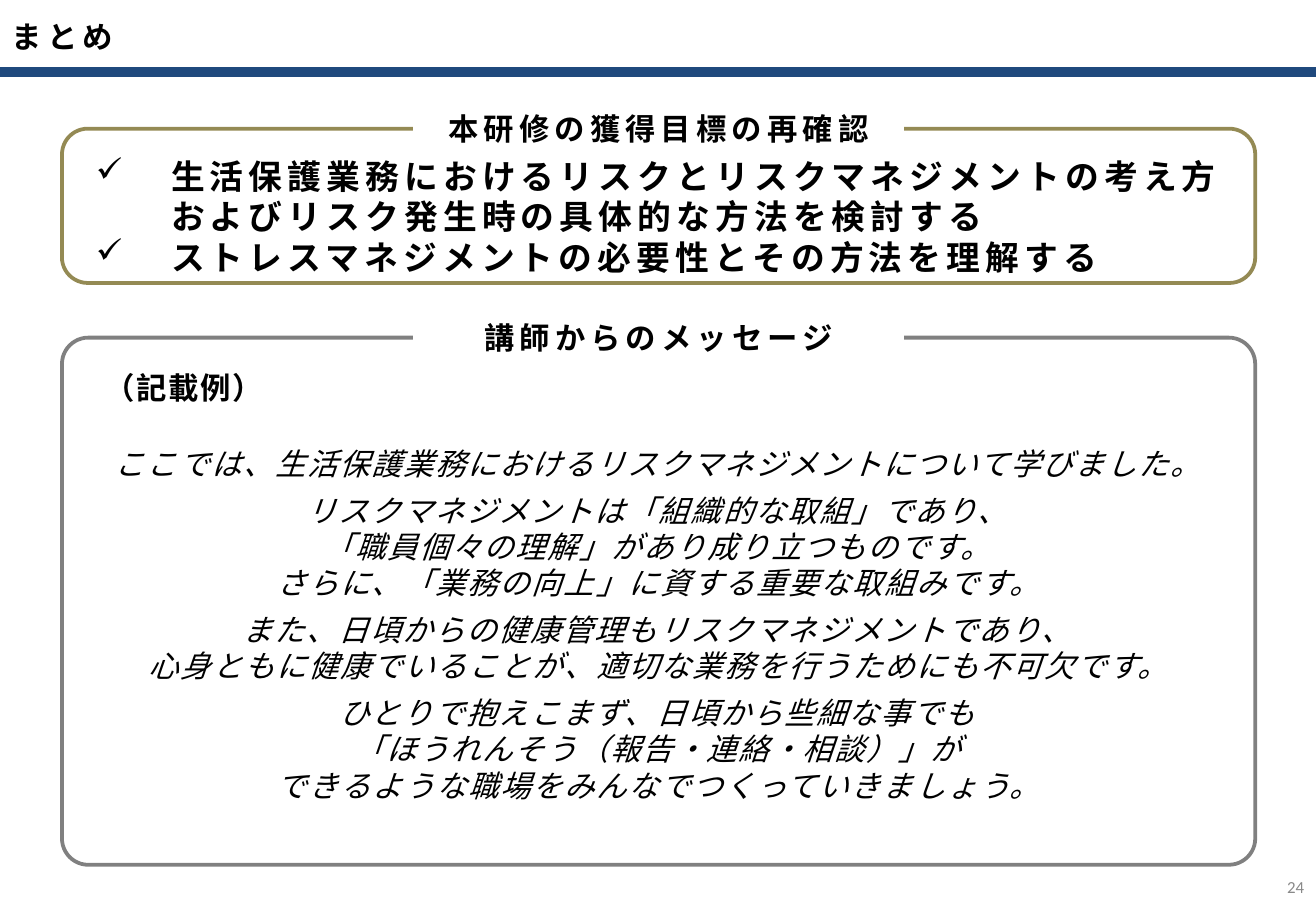
from dataclasses import dataclass

from lxml.etree import SubElement
from pptx import Presentation
from pptx.dml.color import RGBColor
from pptx.enum.shapes import MSO_CONNECTOR, MSO_SHAPE
from pptx.enum.text import MSO_ANCHOR, PP_ALIGN
from pptx.oxml.ns import qn
from pptx.slide import Slide
from pptx.util import Inches, Pt

COLORS = {
    "navy": "1F497D",
    "olive": "948A54",
    "gray": "808080",
    "number": "898989",
    "black": "000000",
    "white": "FFFFFF",
}
JAPANESE = "Noto Sans CJK JP"
LINE_HEIGHT = 1.2
WIDTH, HEIGHT = 10.83, 7.5
HEADER_HEIGHT = 0.59

Box = tuple[float, float, float, float]


@dataclass
class Panel:
    heading: str
    top: float
    height: float
    color: str
    corner: float


PANELS = [
    Panel("本研修の獲得目標の再確認", 1.06, 1.27, "olive", 0.167),
    Panel("講師からのメッセージ", 2.78, 4.34, "gray", 0.05),
]

GOALS = [
    "生活保護業務におけるリスクとリスクマネジメントの考え方およびリスク発生時の具体的な方法を検討する",
    "ストレスマネジメントの必要性とその方法を理解する",
]

MESSAGE = [
    "ここでは、生活保護業務におけるリスクマネジメントについて学びました。",
    "リスクマネジメントは「組織的な取組」であり、\n"
    "「職員個々の理解」があり成り立つものです。\n"
    "さらに、「業務の向上」に資する重要な取組みです。",
    "また、日頃からの健康管理もリスクマネジメントであり、\n"
    "心身ともに健康でいることが、適切な業務を行うためにも不可欠です。",
    "ひとりで抱えこまず、日頃から些細な事でも\n"
    "「ほうれんそう（報告・連絡・相談）」が\n"
    "できるような職場をみんなでつくっていきましょう。",
]


def color(name: str) -> RGBColor:
    return RGBColor.from_string(COLORS[name])


def add_text(
    slide: Slide,
    box: Box,
    texts: list[str],
    *,
    size: float = 18,
    font: str = JAPANESE,
    ink: str = "black",
    fill: str | None = None,
    bold: bool = False,
    italic: bool = False,
    tracking: float = 0,
    align: PP_ALIGN = PP_ALIGN.LEFT,
    space_before: float = 0,
    bullet: str | None = None,
    hanging: float = 0,
) -> None:
    shape = slide.shapes.add_textbox(*map(Inches, box))
    if fill:
        shape.fill.solid()
        shape.fill.fore_color.rgb = color(fill)
    frame = shape.text_frame
    frame.word_wrap = True
    frame.vertical_anchor = MSO_ANCHOR.MIDDLE
    for index, text in enumerate(texts):
        paragraph = frame.add_paragraph() if index else frame.paragraphs[0]
        paragraph.alignment = align
        paragraph.space_before = Pt(space_before)
        paragraph.line_spacing = Pt(size * LINE_HEIGHT)
        if bullet:
            properties = paragraph._p.get_or_add_pPr()
            properties.set("marL", str(Inches(hanging)))
            properties.set("indent", str(-Inches(hanging)))
            SubElement(properties, qn("a:buChar"), char=bullet)
        for line_index, line in enumerate(text.split("\n")):
            if line_index:
                paragraph.add_line_break()
            run = paragraph.add_run()
            run.text = line
            run.font.size = Pt(size)
            run.font.bold = bold
            run.font.italic = italic
            run.font.color.rgb = color(ink)
            run.font.name = font
            run_properties = run._r.get_or_add_rPr()
            run_properties.set("spc", str(int(tracking * 100)))
            SubElement(run_properties, qn("a:ea"), typeface=font)


def add_header(slide: Slide) -> None:
    y = Inches(HEADER_HEIGHT)
    rule = slide.shapes.add_connector(MSO_CONNECTOR.STRAIGHT, 0, y, Inches(WIDTH), y)
    rule.line.color.rgb = color("navy")
    rule.line.width = Pt(6)
    SubElement(rule._element.spPr, qn("a:effectLst"))
    add_text(slide, (0, 0, WIDTH, HEADER_HEIGHT), ["まとめ"], bold=True, tracking=3)


def add_panel(slide: Slide, panel: Panel) -> None:
    frame_box = (0.51, panel.top, 9.82, panel.height)
    shape = slide.shapes.add_shape(
        MSO_SHAPE.ROUNDED_RECTANGLE, *map(Inches, frame_box)
    )
    shape.adjustments[0] = panel.corner
    shape.shadow.inherit = False
    shape.fill.background()
    shape.line.color.rgb = color(panel.color)
    shape.line.width = Pt(2.25)
    # The heading interrupts the top edge of the frame
    add_text(slide, (3.4, panel.top - 0.2, 4.04, 0.4), [panel.heading],
             fill="white", bold=True, tracking=3, align=PP_ALIGN.CENTER)


def main() -> None:
    presentation = Presentation()
    presentation.slide_width = Inches(WIDTH)
    presentation.slide_height = Inches(HEIGHT)
    slide = presentation.slides.add_slide(presentation.slide_layouts[6])

    # Header and frames
    add_header(slide)
    for panel in PANELS:
        add_panel(slide, panel)

    # Training goals
    add_text(slide, (0.69, 1.41, 9.46, 0.74), GOALS, size=20, bold=True,
             tracking=3, bullet="✓", hanging=0.62)

    # Message from the lecturer
    add_text(slide, (0.72, 2.99, 1.58, 0.4), ["（記載例）"], bold=True,
             tracking=1, align=PP_ALIGN.CENTER)
    add_text(slide, (0.67, 3.16, 9.5, 3.96), MESSAGE, italic=True,
             tracking=1, align=PP_ALIGN.CENTER, space_before=6)

    # Slide number
    add_text(slide, (10.42, 7.1, 0.41, 0.4), ["24"], size=10, font="Calibri",
             ink="number", align=PP_ALIGN.RIGHT)

    presentation.save("out.pptx")


if __name__ == "__main__":
    main()
